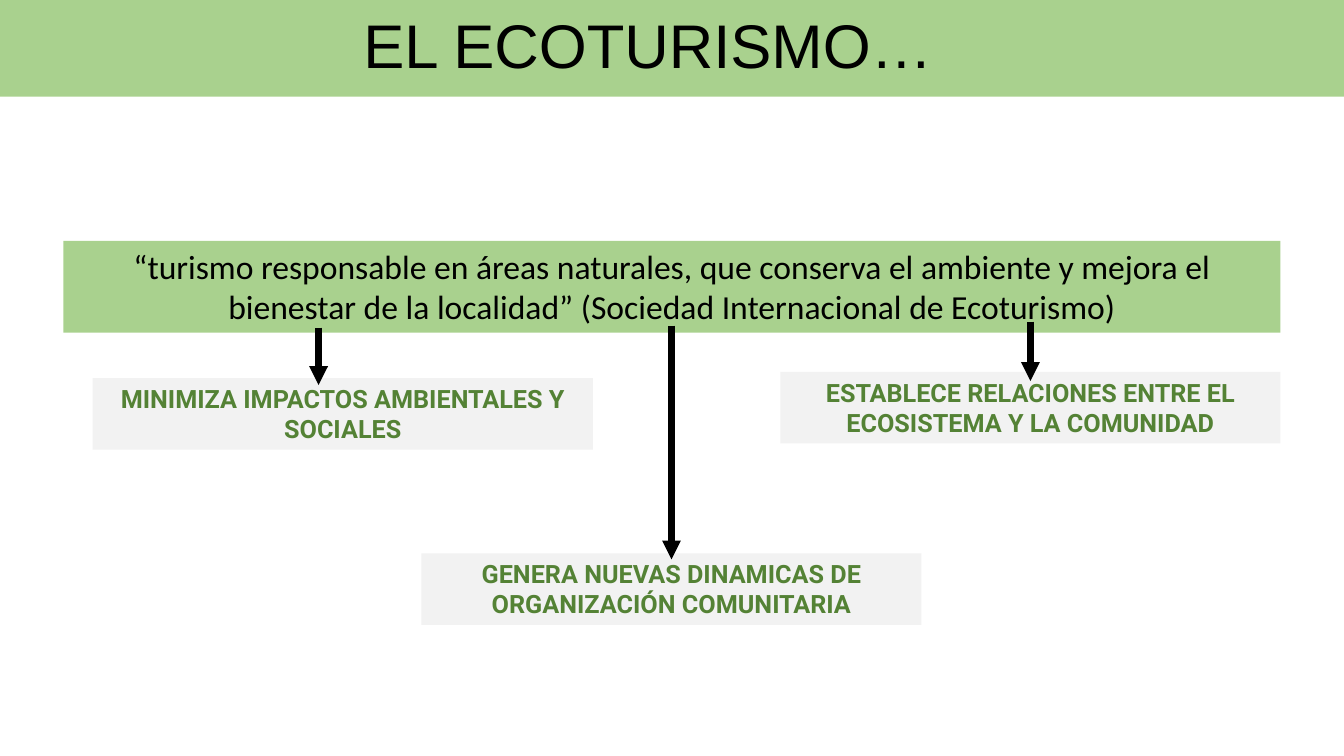
from lxml import etree
from pptx import Presentation
from pptx import util as u
from pptx.dml.color import RGBColor
from pptx.enum import shapes, text
from pptx.oxml.ns import qn

COLORS = {"band": "A9D18E", "effect": "F2F2F2", "effect_text": "548235", "ink": "000000"}

DEFINITION = (
    "“turismo responsable en áreas naturales, que conserva el ambiente y mejora el "
    "bienestar de la localidad” (Sociedad Internacional de Ecoturismo)"
)

EFFECTS = [
    ("MINIMIZA IMPACTOS AMBIENTALES Y SOCIALES", 0.92, 3.75, (3.16, 3.25, 3.82)),
    ("GENERA NUEVAS DINAMICAS DE ORGANIZACIÓN COMUNITARIA", 4.18, 5.49, (6.66, 3.23, 5.55)),
    ("ESTABLECE RELACIONES ENTRE EL ECOSISTEMA Y LA COMUNIDAD", 7.74, 3.69, (10.22, 3.19, 3.78)),
]
EFFECT_SIZE = (4.96, 0.71)


def rgb(name):
    return RGBColor.from_string(COLORS[name])


def write(shape, words, font_name, size, color, bold=False, anchor=text.MSO_ANCHOR.TOP):
    frame = shape.text_frame
    frame.word_wrap = True
    frame.vertical_anchor = anchor
    paragraph = frame.paragraphs[0]
    paragraph.text = words
    paragraph.alignment = text.PP_ALIGN.CENTER
    font = paragraph.font
    font.name, font.size, font.bold = font_name, u.Pt(size), bold
    font.color.rgb = rgb(color)
    return paragraph


def add_panel(slide, box, color):
    panel = slide.shapes.add_shape(shapes.MSO_SHAPE.RECTANGLE, *map(u.Inches, box))
    panel.shadow.inherit = False
    panel.fill.solid()
    panel.fill.fore_color.rgb = rgb(color)
    panel.line.fill.background()
    return panel


def add_header(slide, box):
    left, top, width, height = box
    add_panel(slide, box, "band")
    title_box = (left + 1.19, top, 10.5, height)
    title = slide.shapes.add_textbox(*map(u.Inches, title_box))
    heading = write(title, "EL ECOTURISMO…", "Arial", 44, "ink", anchor=text.MSO_ANCHOR.MIDDLE)
    heading.line_spacing = 0.9


def add_definition(slide, box):
    write(add_panel(slide, box, "band"), DEFINITION, "Calibri", 24, "ink")


def add_effect(slide, box, words):
    write(add_panel(slide, box, "effect"), words, "Roboto", 18, "effect_text", bold=True)


def add_arrow(slide, x, start, end):
    arrow = slide.shapes.add_connector(
        shapes.MSO_CONNECTOR.STRAIGHT, *map(u.Inches, (x, start, x, end))
    )
    arrow.line.color.rgb = rgb("ink")
    arrow.line.width = u.Pt(4.5)
    etree.SubElement(arrow.line._get_or_add_ln(), qn("a:tailEnd"), type="triangle")
    etree.SubElement(arrow._element.spPr, qn("a:effectLst"))


def main():
    deck = Presentation()
    deck.slide_width, deck.slide_height = u.Inches(13.33), u.Inches(7.5)
    slide = deck.slides.add_slide(deck.slide_layouts[6])
    add_definition(slide, (0.63, 2.39, 12.07, 0.91))
    add_header(slide, (-0.01, 0, 13.34, 0.96))
    for words, left, top, _ in EFFECTS:
        add_effect(slide, (left, top, *EFFECT_SIZE), words)
    for *_, span in EFFECTS:
        add_arrow(slide, *span)
    deck.save("out.pptx")


if __name__ == "__main__":
    main()
